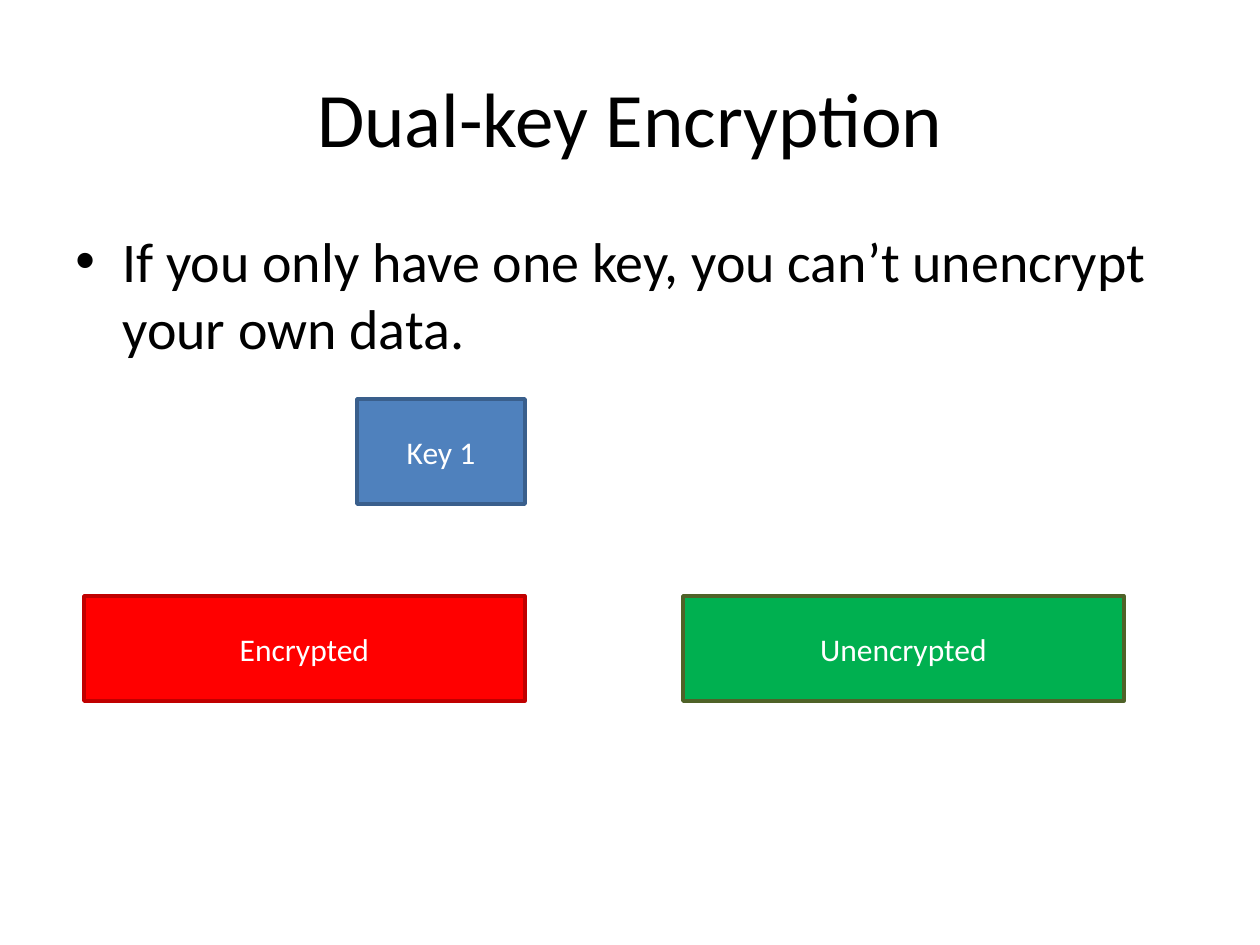
from dataclasses import dataclass

from lxml.etree import SubElement
from pptx import Presentation
from pptx.dml.color import RGBColor as RGB
from pptx.enum.shapes import MSO_SHAPE as Shape
from pptx.enum.text import MSO_ANCHOR as Anchor, PP_ALIGN as Align
from pptx.oxml.ns import qn
from pptx.util import Emu, Pt

TITLE = "Dual-key Encryption"
BULLETS = ["If you only have one key, you can’t unencrypt your own data."]


@dataclass(frozen=True)
class Theme:
    font: str = "Calibri"
    title: int = 44
    body: int = 32
    label: int = 18
    line: int = 2
    ink: str = "000000"
    paper: str = "FFFFFF"
    key: tuple = ("4F81BD", "3A5F8C")
    locked: tuple = ("FF0000", "C00000")
    opened: tuple = ("00B050", "4F6228")


T = Theme()
LEFT, GAP = 84, 158
KEY_W, DATA_W, BOX_H = 168, 441, 105
KEY_Y, DATA_Y = 399, 596
DATA_RIGHT = LEFT + DATA_W
BOXES = [
    ("Key 1", DATA_RIGHT - KEY_W, KEY_Y, KEY_W, T.key),
    ("Encrypted", LEFT, DATA_Y, DATA_W, T.locked),
    ("Unencrypted", DATA_RIGHT + GAP, DATA_Y, DATA_W, T.opened),
]


def px(n):
    return Emu(round(n * 914400 / 126))


def assign(obj, values):
    for name, value in values.items():
        setattr(obj, name, value)


def write(p, text, size, color, align):
    p.alignment = align
    r = p.add_run()
    r.text = text
    assign(r.font, {"name": T.font, "size": Pt(size)})
    r.font.color.rgb = RGB.from_string(color)


def add_title(s):
    sp = s.shapes.title
    assign(sp, {"left": px(63), "top": px(38), "width": px(1134), "height": px(157)})
    assign(sp.text_frame, {"vertical_anchor": Anchor.MIDDLE, "word_wrap": True})
    write(sp.text_frame.paragraphs[0], TITLE, T.title, T.ink, Align.CENTER)


def add_bullets(s):
    tf = s.shapes.add_textbox(px(63), px(220), px(1134), px(624)).text_frame
    assign(tf, {"word_wrap": True, "vertical_anchor": Anchor.TOP})
    for i, text in enumerate(BULLETS):
        p = tf.add_paragraph() if i else tf.paragraphs[0]
        p.space_before = Pt(T.body * 0.2)
        write(p, text, T.body, T.ink, Align.LEFT)
        pPr = p._p.get_or_add_pPr()
        pPr.set("marL", str(px(47)))
        pPr.set("indent", str(-px(47)))
        SubElement(pPr, qn("a:buFont"), typeface="Arial")
        SubElement(pPr, qn("a:buChar"), char="•")


def add_box(s, text, x, y, w, colors):
    fill, line = map(RGB.from_string, colors)
    sp = s.shapes.add_shape(Shape.RECTANGLE, px(x), px(y), px(w), px(BOX_H))
    sp.shadow.inherit = False
    sp.fill.solid()
    sp.fill.fore_color.rgb = fill
    sp.line.color.rgb = line
    sp.line.width = Pt(T.line)
    assign(sp.text_frame, {"word_wrap": True, "vertical_anchor": Anchor.MIDDLE})
    write(sp.text_frame.paragraphs[0], text, T.label, T.paper, Align.CENTER)


def main():
    prs = Presentation()
    assign(prs, {"slide_width": px(1260), "slide_height": px(945)})
    s = prs.slides.add_slide(prs.slide_layouts[5])
    s.background.fill.solid()
    s.background.fill.fore_color.rgb = RGB.from_string(T.paper)
    add_title(s)
    add_bullets(s)
    for box in BOXES:
        add_box(s, *box)
    prs.save("out.pptx")


if __name__ == "__main__":
    main()
